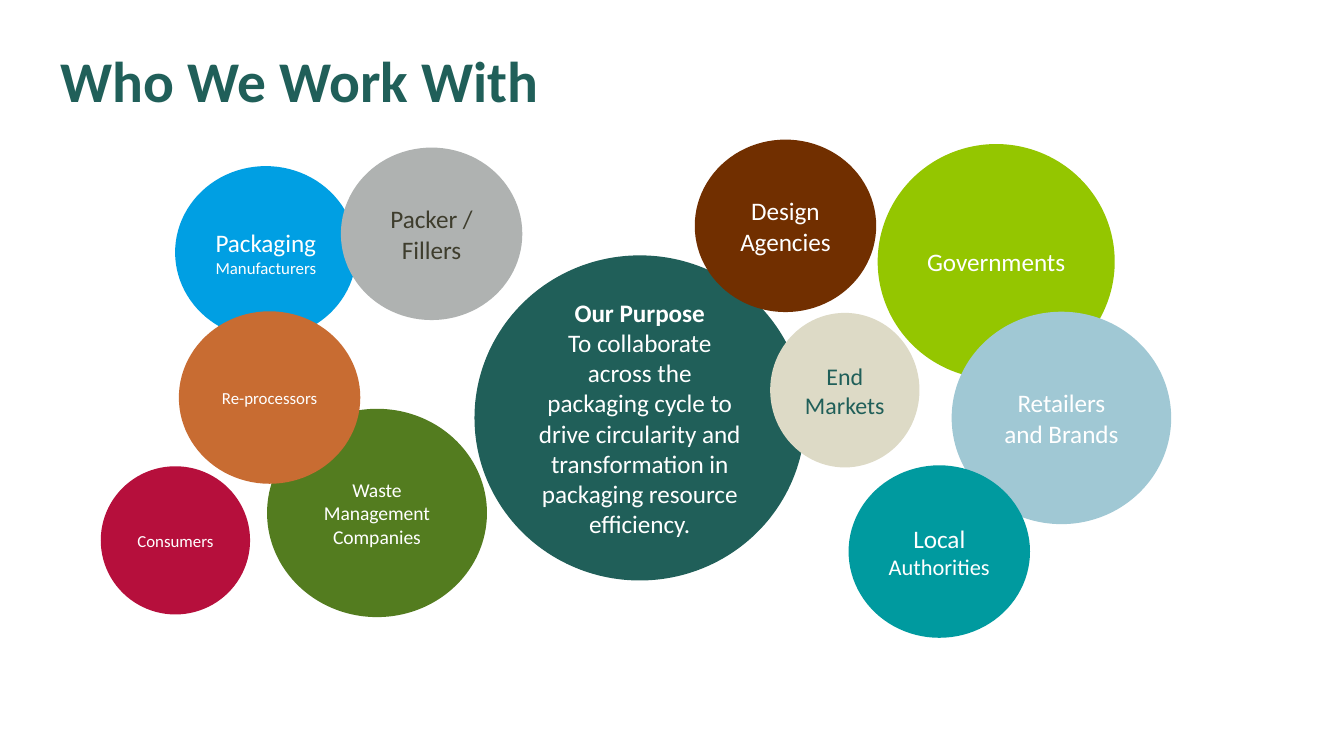
from dataclasses import dataclass

from pptx import Presentation
from pptx.dml.color import RGBColor
from pptx.enum.shapes import MSO_SHAPE
from pptx.enum.text import MSO_ANCHOR, MSO_AUTO_SIZE, PP_ALIGN
from pptx.slide import Slide
from pptx.text.text import _Paragraph as Paragraph
from pptx.util import Pt


@dataclass(frozen=True)
class Theme:
    font: str = "Calibri"
    green: str = "205F59"
    white: str = "FFFFFF"
    dark: str = "3E3D2D"
    title: float = 30.8
    large: float = 13.5
    compact: float = 12.8
    medium: float = 12
    small: float = 10.5
    tiny: float = 9


THEME = Theme()


@dataclass(frozen=True)
class Run:
    text: str
    size: float = THEME.large
    bold: bool = False


@dataclass(frozen=True)
class Circle:
    left: float
    top: float
    width: float
    height: float
    fill: str
    paragraphs: tuple[tuple[Run, ...], ...]
    color: str = THEME.white
    side_inset: float = 7.2


def partner(left: float, top: float, fill: str, *runs: Run,
            size: tuple[float, float] = (97.2, 92.4), **options) -> Circle:
    """Describe a one-paragraph circle, of the common size unless told otherwise."""
    return Circle(left, top, *size, fill, (runs,), **options)


PURPOSE = Circle(254.2, 136.8, 177.1, 174.2, THEME.green, (
    (Run("Our Purpose", bold=True),),
    (Run("To collaborate across the packaging cycle to drive circularity and "
         "transformation in packaging resource efficiency."),),
))

# Listed from back to front, since the circles overlap.
CIRCLES = (
    PURPOSE,
    partner(470.2, 77.2, "94C600", Run("Governments"), size=(127, 126)),
    partner(93.8, 89, "009FE3", Run("Packaging "), Run("Manufacturers", THEME.tiny)),
    partner(509.8, 167, "A0C8D4", Run("Retailers and Brands"), size=(117.6, 113.8)),
    partner(143.1, 219, "537C1F", Run("Waste Management Companies", THEME.small),
            size=(117.8, 111.6)),
    partner(454.6, 249.3, "009A9F", Run("Local "), Run("Authorities", THEME.medium)),
    partner(182.6, 79.1, "AFB2B1", Run("Packer / Fillers"), color=THEME.dark),
    partner(372.2, 74.8, "712F00", Run("Design Agencies")),
    partner(95.8, 166.8, "C86C32", Run("Re-processors", THEME.tiny)),
    partner(54, 249.8, "B60F3C", Run("Consumers", THEME.tiny), size=(80, 79.4)),
    partner(412.6, 167.6, "DDDAC6", Run("End Markets", THEME.compact),
            size=(80, 82.8), color=THEME.green, side_inset=5.4),
)


def add_run(paragraph: Paragraph, content: Run, color: str) -> None:
    run = paragraph.add_run()
    run.text = content.text
    formats = {"name": THEME.font, "size": Pt(content.size), "bold": content.bold}
    for name, value in formats.items():
        setattr(run.font, name, value)
    run.font.color.rgb = RGBColor.from_string(color)


def add_title(slide: Slide, text: str) -> None:
    title = slide.shapes.title
    box = {"left": 25.2, "top": 24.5, "width": 360, "height": 41}
    for name, value in box.items():
        setattr(title, name, Pt(value))
    frame_formats = {"word_wrap": True, "vertical_anchor": MSO_ANCHOR.TOP,
                     "auto_size": MSO_AUTO_SIZE.SHAPE_TO_FIT_TEXT}
    for name, value in frame_formats.items():
        setattr(title.text_frame, name, value)
    paragraph = title.text_frame.paragraphs[0]
    paragraph_formats = {"alignment": PP_ALIGN.LEFT, "line_spacing": 0.9,
                         "space_before": Pt(0), "space_after": Pt(4.5)}
    for name, value in paragraph_formats.items():
        setattr(paragraph, name, value)
    add_run(paragraph, Run(text, THEME.title, True), THEME.green)


def add_circle(slide: Slide, circle: Circle) -> None:
    shape = slide.shapes.add_shape(
        MSO_SHAPE.FLOWCHART_CONNECTOR,
        Pt(circle.left), Pt(circle.top), Pt(circle.width), Pt(circle.height))
    shape.shadow.inherit = False
    shape.fill.solid()
    shape.fill.fore_color.rgb = RGBColor.from_string(circle.fill)
    shape.line.fill.background()
    frame = shape.text_frame
    frame_formats = {"word_wrap": True, "vertical_anchor": MSO_ANCHOR.MIDDLE,
                     "margin_left": Pt(circle.side_inset),
                     "margin_right": Pt(circle.side_inset)}
    for name, value in frame_formats.items():
        setattr(frame, name, value)
    for index, runs in enumerate(circle.paragraphs):
        paragraph = frame.add_paragraph() if index else frame.paragraphs[0]
        paragraph.alignment = PP_ALIGN.CENTER
        for run in runs:
            add_run(paragraph, run, circle.color)


def main() -> None:
    presentation = Presentation()
    presentation.slide_width, presentation.slide_height = Pt(720), Pt(405)
    title_only = presentation.slide_layouts[5]
    slide = presentation.slides.add_slide(title_only)
    add_title(slide, "Who We Work With")
    for circle in CIRCLES:
        add_circle(slide, circle)
    presentation.save("out.pptx")


if __name__ == "__main__":
    main()
